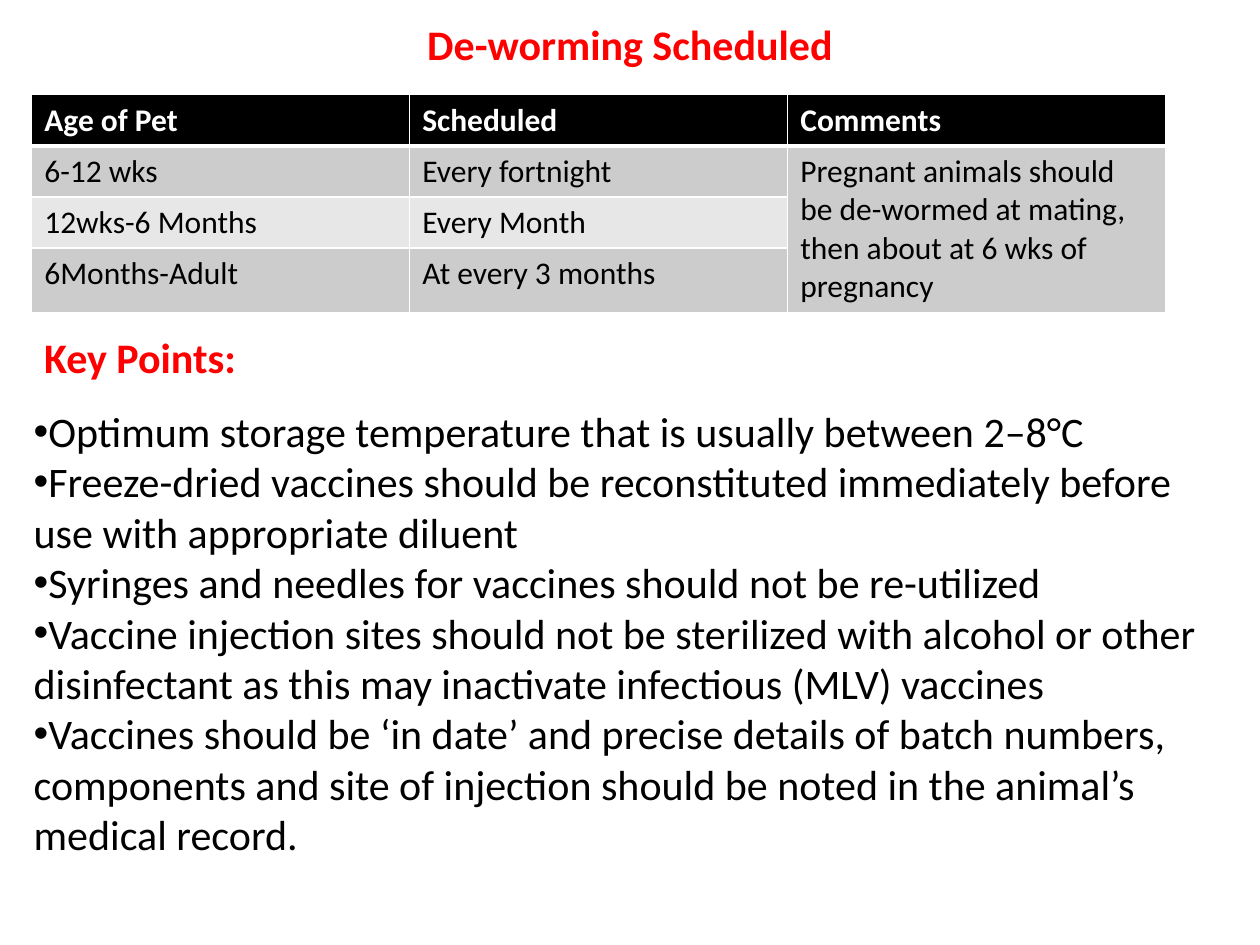
from dataclasses import dataclass

from lxml.etree import SubElement
from pptx import Presentation
from pptx.dml.color import RGBColor
from pptx.enum.text import MSO_ANCHOR, MSO_AUTO_SIZE, PP_ALIGN
from pptx.oxml.ns import qn
from pptx.util import Cm, Pt


@dataclass(frozen=True)
class Theme:
    font: str = "Calibri"
    red: str = "FF0000"
    ink: str = "000000"
    paper: str = "FFFFFF"
    bands: tuple = ("CCCCCC", "E7E7E7")
    large: int = 24
    small: int = 18


def rgb(code):
    return RGBColor.from_string(code)


def write(frame, *lines, font, size, color, bold=False, align=None, bullet=None):
    """Fill a text frame with one paragraph per line."""
    for i, line in enumerate(lines):
        par = frame.paragraphs[0] if i == 0 else frame.add_paragraph()
        if bullet:
            props = par._p.get_or_add_pPr()
            SubElement(props, qn("a:buFont"), typeface="Arial")
            SubElement(props, qn("a:buChar"), char=bullet)
        if align is not None:
            par.alignment = align
        run = par.add_run()
        run.text = line
        run.font.name = font
        run.font.size = Pt(size)
        run.font.bold = bold
        run.font.color.rgb = rgb(color)


def edge(cell, side, width, color):
    """Draw one border of a cell; call before the fill is set."""
    line = SubElement(cell._tc.get_or_add_tcPr(), qn(f"a:ln{side}"), w=str(Pt(width)))
    fill = SubElement(line, qn("a:solidFill"))
    SubElement(fill, qn("a:srgbClr"), val=color)


class Page:
    def __init__(self, slide, theme):
        self.slide = slide
        self.theme = theme

    def title(self, text, left, top, width, height):
        box = self.slide.shapes.title
        box.left, box.top, box.width, box.height = map(Cm, (left, top, width, height))
        frame = box.text_frame
        frame.vertical_anchor = MSO_ANCHOR.MIDDLE
        look = self.theme
        write(frame, text, font=look.font, size=look.large, color=look.red,
              bold=True, align=PP_ALIGN.CENTER)

    def text(self, lines, left, top, width, height, wrap=True, **style):
        box = self.slide.shapes.add_textbox(*map(Cm, (left, top, width, height)))
        frame = box.text_frame
        frame.word_wrap = wrap
        frame.auto_size = MSO_AUTO_SIZE.SHAPE_TO_FIT_TEXT
        write(frame, *lines, font=self.theme.font, size=self.theme.large, **style)

    def table(self, rows, left, top, col, row):
        look = self.theme
        count, width = len(rows), len(rows[0])
        grid = self.slide.shapes.add_table(
            count, width, Cm(left), Cm(top), Cm(col * width), Cm(row * count)).table
        for line in grid.rows:
            line.height = Cm(row)
        for r, words in enumerate(rows):
            head = r == 0
            for c, word in enumerate(words):
                cell = grid.cell(r, c)
                for side in "LRTB":
                    thick = (head and side == "B") or (r == 1 and side == "T")
                    edge(cell, side, 3 if thick else 1, look.paper)
                cell.fill.solid()
                cell.fill.fore_color.rgb = rgb(look.ink if head else look.bands[(r - 1) % 2])
                if word:
                    write(cell.text_frame, word, font=look.font, size=look.small,
                          color=look.paper if head else look.ink, bold=head)
        # The comment spans every body row
        grid.cell(1, width - 1).merge(grid.cell(count - 1, width - 1))


SCHEDULE = [
    ("Age of Pet", "Scheduled", "Comments"),
    ("6-12 wks", "Every fortnight",
     "Pregnant animals should be de-wormed at mating, then about at 6 wks of pregnancy"),
    ("12wks-6 Months", "Every Month", ""),
    ("6Months-Adult", "At every 3 months", ""),
]

POINTS = [
    "Optimum storage temperature that is usually between 2–8°C",
    "Freeze-dried vaccines should be reconstituted immediately before use with "
    "appropriate diluent",
    "Syringes and needles for vaccines should not be re-utilized",
    "Vaccine injection sites should not be sterilized with alcohol or other "
    "disinfectant as this may inactivate infectious (MLV) vaccines",
    "Vaccines should be ‘in date’ and precise details of batch numbers, components "
    "and site of injection should be noted in the animal’s medical record.",
]


def main():
    deck = Presentation()
    deck.slide_width, deck.slide_height = Cm(25.4), Cm(19.05)
    theme = Theme()
    page = Page(deck.slides.add_slide(deck.slide_layouts[5]), theme)

    # Title and schedule
    page.title("De-worming Scheduled", 1.27, 0.2, 22.86, 1.35)
    page.table(SCHEDULE, 0.64, 1.91, col=7.62, row=1.03)

    # Key points
    page.text(["Key Points:"], 0.64, 6.55, 4.42, 1.28, wrap=False,
              color=theme.red, bold=True)
    page.text(POINTS, 0.43, 8.05, 24.13, 10.52, color=theme.ink, bullet="•")

    deck.save("out.pptx")


if __name__ == "__main__":
    main()
